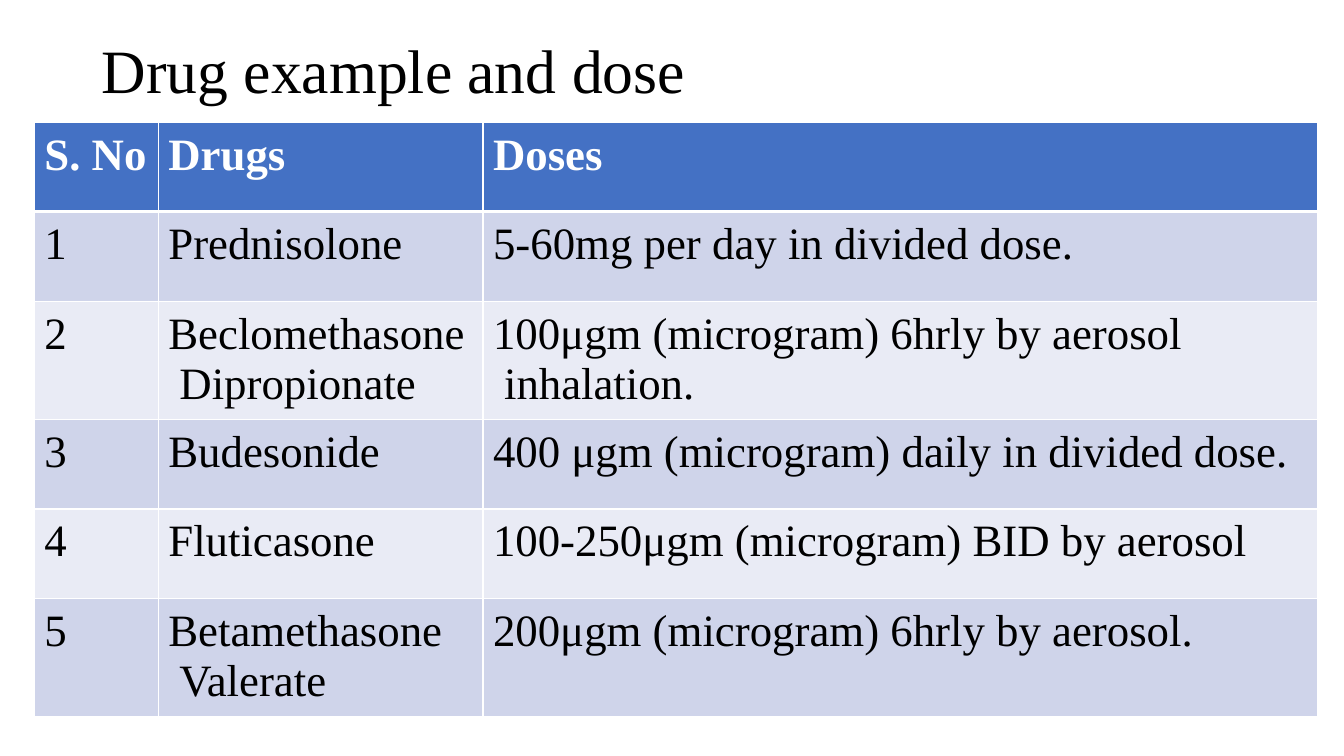
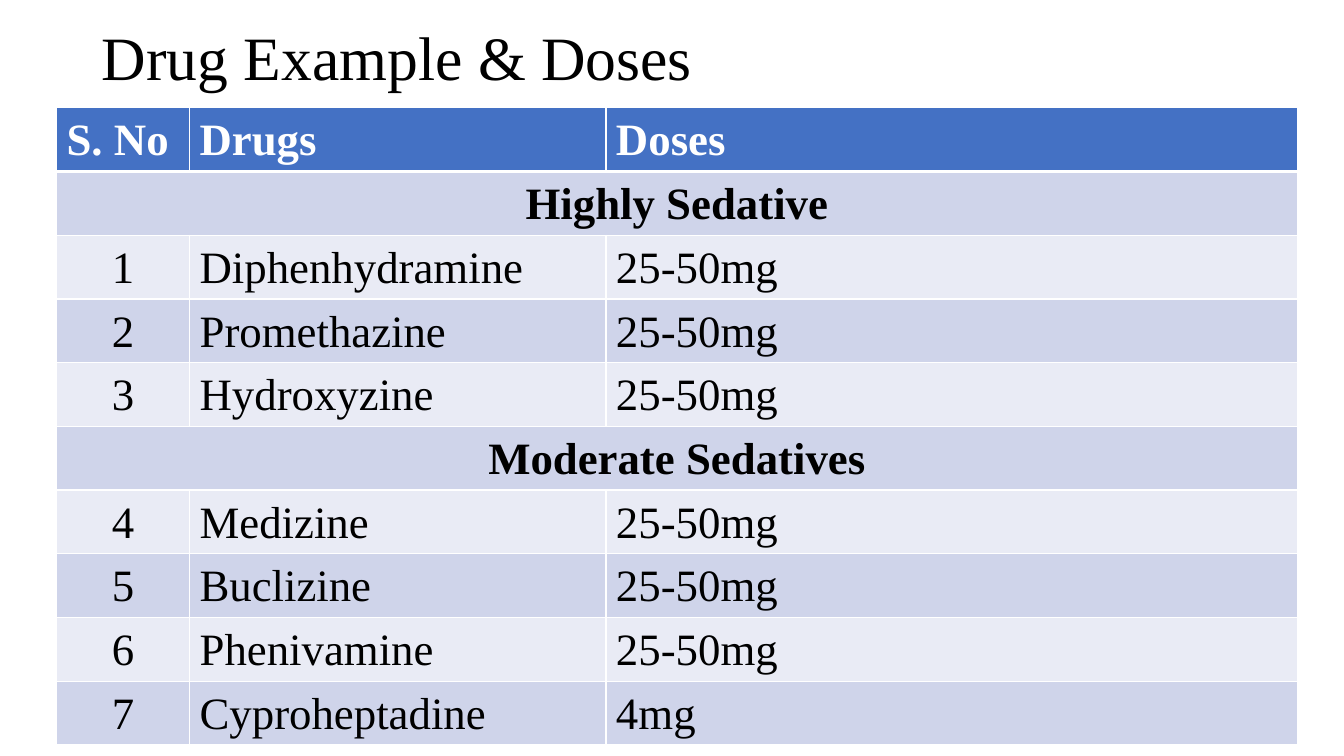
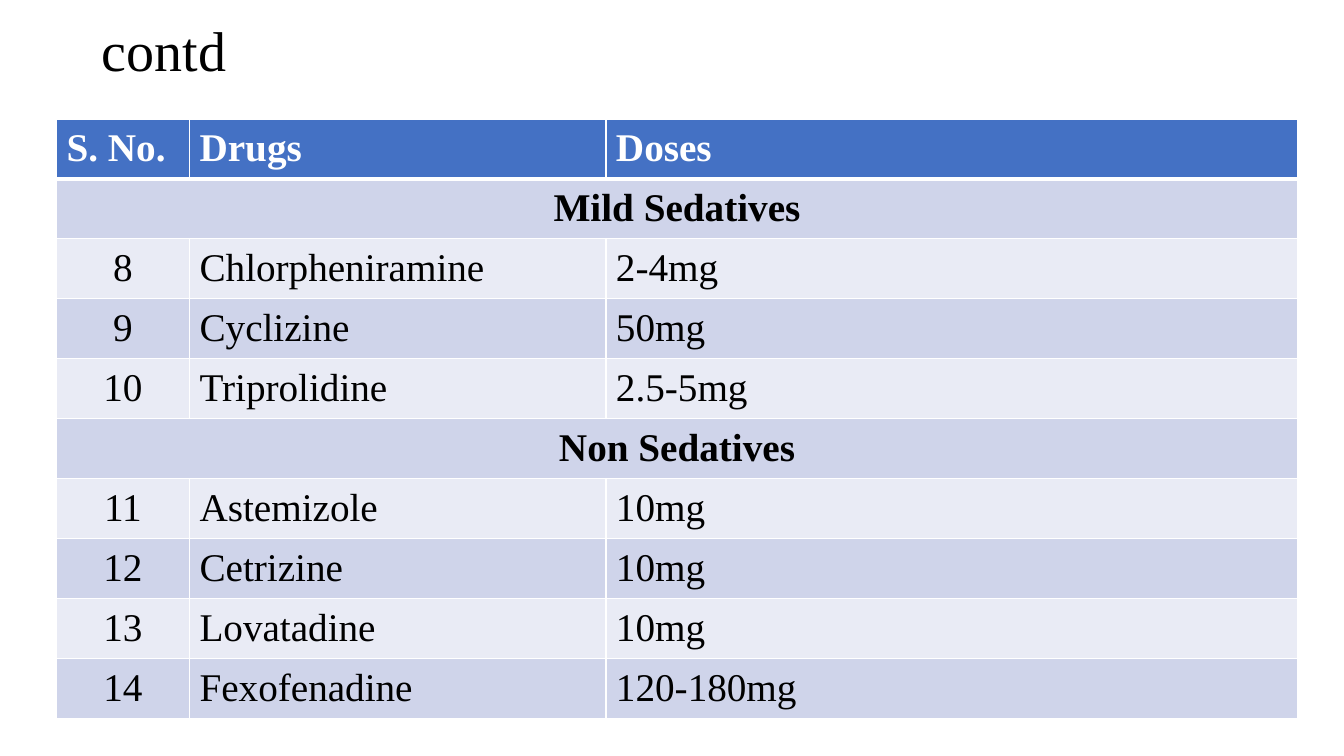
"""Build three slides of drug and dose tables."""
from lxml.etree import SubElement
from pptx import Presentation
from pptx.dml.color import RGBColor
from pptx.enum.text import PP_ALIGN as Align
from pptx.oxml.ns import qn
from pptx.util import Inches, Pt

FONT = "Times New Roman"
COLORS = {"text": "000000", "white": "FFFFFF", "header": "4471C4",
          "dark_band": "CFD4EA", "light_band": "E9EBF5"}
PAGES = [
    {"title": "Drug example and dose", "title_at": (0.29, 5.82, 0.76), "title_size": 44,
     "table_at": (0.34, 1.21), "columns": [1.23, 3.22, 8.28],
     "heights": [0.89, 0.89, 1.17, 0.89, 0.89, 1.17],
     "size": 32, "number_align": Align.LEFT,
     "rows": [
         ["S. No", "Drugs", "Doses"],
         ["1", "Prednisolone", "5-60mg per day in divided dose."],
         ["2", "Beclomethasone Dipropionate",
          "100μgm (microgram) 6hrly by aerosol inhalation."],
         ["3", "Budesonide", "400 μgm (microgram) daily in divided dose."],
         ["4", "Fluticasone", "100-250μgm (microgram) BID by aerosol"],
         ["5", "Betamethasone Valerate", "200μgm (microgram) 6hrly by aerosol."]]},
    {"title": "Drug Example & Doses", "title_at": (0.16, 5.89, 0.76), "title_size": 44,
     "table_at": (0.56, 1.07), "columns": [1.32, 4.13, 6.86],
     "heights": [6.32 / 10] * 10,
     "size": 32, "number_align": Align.CENTER,
     "rows": [
         ["S. No", "Drugs", "Doses"],
         ["Highly Sedative"],
         ["1", "Diphenhydramine", "25-50mg"],
         ["2", "Promethazine", "25-50mg"],
         ["3", "Hydroxyzine", "25-50mg"],
         ["Moderate Sedatives"],
         ["4", "Medizine", "25-50mg"],
         ["5", "Buclizine", "25-50mg"],
         ["6", "Phenivamine", "25-50mg"],
         ["7", "Cyproheptadine", "4mg"]]},
    {"title": "contd", "title_at": (0.12, 1.26, 0.69), "title_size": 40,
     "table_at": (0.56, 1.18), "columns": [1.32, 4.13, 6.86],
     "heights": [5.95 / 10] * 10,
     "size": 28, "number_align": Align.CENTER,
     "rows": [
         ["S. No.", "Drugs", "Doses"],
         ["Mild Sedatives"],
         ["8", "Chlorpheniramine", "2-4mg"],
         ["9", "Cyclizine", "50mg"],
         ["10", "Triprolidine", "2.5-5mg"],
         ["Non Sedatives"],
         ["11", "Astemizole", "10mg"],
         ["12", "Cetrizine", "10mg"],
         ["13", "Lovatadine", "10mg"],
         ["14", "Fexofenadine", "120-180mg"]]},
]


def write(frame, text, size, color="text", bold=False, align=Align.LEFT, left=0, hanging=0):
    frame.word_wrap = True
    para = frame.paragraphs[0]
    para.alignment = align
    layout = para._p.get_or_add_pPr()
    layout.set("marL", str(Inches(left + hanging)))
    layout.set("indent", str(Inches(-hanging)))
    span = para.add_run()
    span.text = text
    span.font.name = FONT
    span.font.size = Pt(size)
    span.font.bold = bold
    span.font.color.rgb = RGBColor.from_string(COLORS[color])


def style_cell(cell, fill, top, bottom):
    cell.margin_left = cell.margin_right = cell.margin_bottom = 0
    cell.margin_top = Inches(0.08)
    properties = cell._tc.get_or_add_tcPr()
    for side, width in (("L", 1), ("R", 1), ("T", top), ("B", bottom)):
        line = SubElement(properties, qn(f"a:ln{side}"), w=str(Pt(width)))
        solid = SubElement(line, qn("a:solidFill"))
        SubElement(solid, qn("a:srgbClr"), val=COLORS["white"])
    cell.fill.solid()
    cell.fill.fore_color.rgb = RGBColor.from_string(COLORS[fill])


deck = Presentation()
deck.slide_width, deck.slide_height = Inches(13.33), Inches(7.5)

for content in PAGES:
    page = deck.slides.add_slide(deck.slide_layouts[6])
    top, width, height = content["title_at"]
    box = page.shapes.add_textbox(Inches(1), Inches(top), Inches(width), Inches(height))
    frame = box.text_frame
    frame.margin_left = frame.margin_right = frame.margin_bottom = 0
    frame.margin_top = Inches(0.03)
    write(frame, content["title"], content["title_size"], left=0.01)

    left, top = content["table_at"]
    rows, columns, heights = content["rows"], content["columns"], content["heights"]
    table = page.shapes.add_table(len(rows), len(columns), Inches(left), Inches(top),
                                  Inches(sum(columns)), Inches(sum(heights))).table
    for column, width in zip(table.columns, columns):
        column.width = Inches(width)
    for index, (row, texts) in enumerate(zip(table.rows, rows)):
        row.height = Inches(heights[index])
        header, section = index == 0, len(texts) == 1
        fill = "header" if header else "dark_band" if index % 2 else "light_band"
        for cell in row.cells:
            style_cell(cell, fill, top=3 if index == 1 else 1, bottom=3 if header else 1)
        if section:
            table.cell(index, 0).merge(table.cell(index, len(columns) - 1))
        for position, text in enumerate(texts):
            align = Align.LEFT
            if section:
                align = Align.CENTER
            elif position == 0 and not header:
                align = content["number_align"]
            centered = align == Align.CENTER
            write(table.cell(index, position).text_frame, text, content["size"],
                  color="white" if header else "text", bold=header or section, align=align,
                  left=0 if centered else 0.1, hanging=0 if centered else 0.11)

deck.save("out.pptx")
